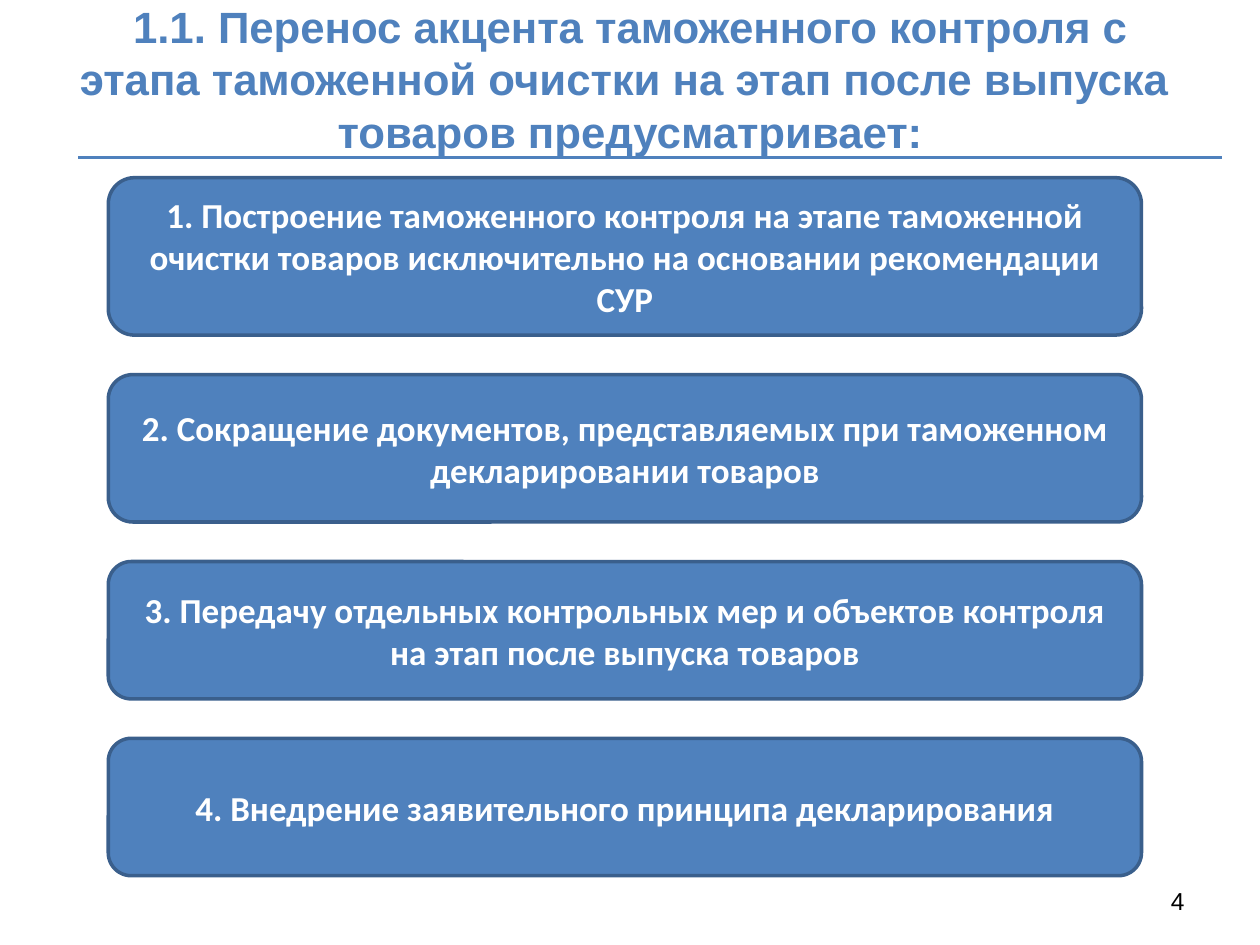
from lxml import etree
from pptx import Presentation
from pptx import util as u
from pptx.dml.color import RGBColor
from pptx.enum import shapes, text
from pptx.oxml.ns import qn

BLUE = RGBColor(0x4F, 0x81, 0xBD)
EDGE = RGBColor(0x3A, 0x5F, 0x8C)
WHITE = RGBColor(0xFF, 0xFF, 0xFF)
BLACK = RGBColor(0, 0, 0)

HEADING = (
    "1.1. Перенос акцента таможенного контроля с этапа таможенной очистки "
    "на этап после выпуска \vтоваров предусматривает:"
)
MEASURES = [
    (1.25, "1. Построение таможенного контроля на этапе таможенной очистки товаров "
           "исключительно на основании рекомендации СУР"),
    (1.17, "2. Сокращение документов, представляемых при таможенном декларировании товаров"),
    (1.09, "3. Передачу отдельных контрольных мер и объектов контроля на этап после выпуска товаров"),
    (1.09, "4. Внедрение заявительного принципа декларирования"),
]


def place(part, box):
    """Move a part to a box of left, top, width and height in inches."""
    part.left, part.top, part.width, part.height = map(u.Inches, box)


def write(part, words, font_name, size, color, bold, align):
    """Fill a part with one vertically centred, wrapped paragraph."""
    frame = part.text_frame
    frame.text = words
    frame.word_wrap = True
    frame.auto_size = text.MSO_AUTO_SIZE.NONE
    frame.vertical_anchor = text.MSO_ANCHOR.MIDDLE
    paragraph = frame.paragraphs[0]
    paragraph.alignment = align
    font = paragraph.font
    font.name, font.size, font.bold = font_name, u.Pt(size), bold
    font.color.rgb = color


def add_heading(slide, box):
    """Set the title in the upper part of its box, above the rule."""
    title = slide.shapes.title
    place(title, box)
    write(title, HEADING, "Arial", 25, BLUE, True, text.PP_ALIGN.CENTER)
    title.text_frame.margin_top = 0
    title.text_frame.margin_bottom = u.Inches(0.61)


def add_rule(slide, left, right, y):
    """Draw the horizontal rule under the title."""
    rule = slide.shapes.add_connector(
        shapes.MSO_CONNECTOR.STRAIGHT, *map(u.Inches, (left, y, right, y)))
    rule.line.color.rgb = BLUE
    rule.line.width = u.Pt(2.25)
    etree.SubElement(rule.line._get_or_add_ln().getparent(), qn("a:effectLst"))


def add_measures(slide, box):
    """Stack the measures down the box with equal gaps."""
    left, top, width, height = box
    gap = (height - sum(tall for tall, _ in MEASURES)) / (len(MEASURES) - 1)
    for tall, words in MEASURES:
        measure = slide.shapes.add_shape(
            shapes.MSO_SHAPE.ROUNDED_RECTANGLE,
            *map(u.Inches, (left, top, width, tall)))
        measure.shadow.inherit = False
        measure.fill.solid()
        measure.fill.fore_color.rgb = BLUE
        measure.line.color.rgb = EDGE
        measure.line.width = u.Pt(2)
        write(measure, words, "Calibri", 20, WHITE, True, text.PP_ALIGN.CENTER)
        top += tall + gap


def add_page_number(slide, box):
    """Write the page number at the lower right."""
    number = slide.shapes.add_textbox(*map(u.Inches, box))
    write(number, "4", "Arial", 14, BLACK, False, text.PP_ALIGN.RIGHT)


def main():
    """Build and save the slide."""
    deck = Presentation()
    deck.slide_width, deck.slide_height = u.Inches(10), u.Inches(7.5)
    slide = deck.slides.add_slide(deck.slide_layouts[5])
    add_heading(slide, (0.5, 0.3, 9, 1.25))
    add_page_number(slide, (7.17, 6.95, 2.33, 0.4))
    add_measures(slide, (0.86, 1.41, 8.2, 5.54))
    add_rule(slide, 0.62, 9.7, 1.25)
    deck.save("out.pptx")


if __name__ == "__main__":
    main()
